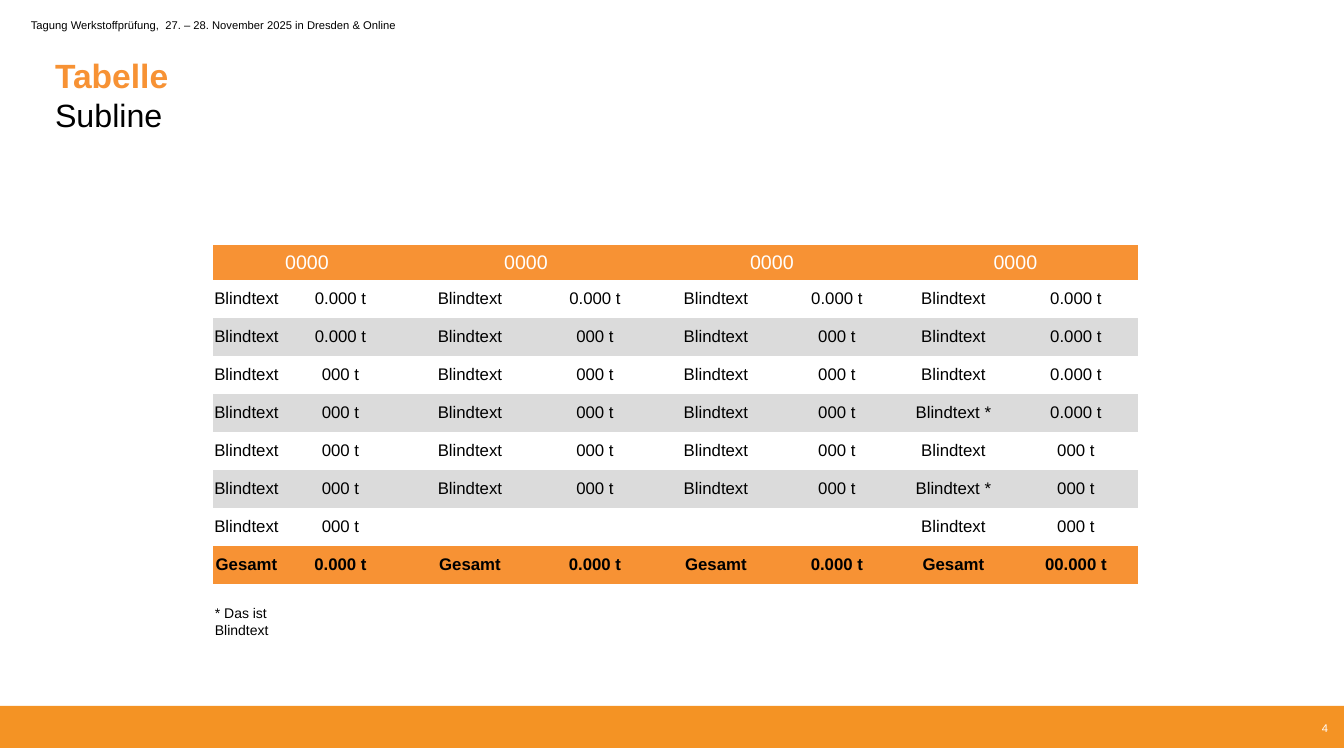
"""Build the table slide with header line, title, totals table and footer bar."""
import copy
from dataclasses import dataclass

import pptx
import pptx.dml.color
import pptx.enum.shapes
import pptx.enum.text
import pptx.oxml.ns
import pptx.util

SLIDE_WIDTH, SLIDE_HEIGHT = 1344, 756
EMU_PER_PX = 12192000 / SLIDE_WIDTH
PLAIN_TABLE_STYLE = "{2D5ABB26-0587-4C30-8999-92F81FD0307C}"
ALIGN = pptx.enum.text.PP_ALIGN
ANCHOR = pptx.enum.text.MSO_ANCHOR


@dataclass(frozen=True)
class Theme:
    """Colours, font and type sizes of the slide."""
    font: str = "Arial"
    accent: str = "F79234"
    bar: str = "F49324"
    band: str = "DBDBDB"
    light: str = "FFFFFF"
    ink: str = "000000"
    headline: int = 24
    subline: int = 23
    column_head: int = 14
    entry: int = 12
    footnote: int = 10
    small: int = 8


THEME = Theme()
COLUMN_WIDTHS = (67, 121, 138, 112, 130, 112, 121, 124)
HEAD_HEIGHT, ROW_HEIGHT = 35, 38
HEADS = ("0000",) * 4
ENTRY, STARRED, EMPTY = "Blindtext", "Blindtext *", ""
LARGE, SMALL = "0.000 t", "000 t"
ROWS = (
    (ENTRY, LARGE) * 4,
    (ENTRY, LARGE) + (ENTRY, SMALL) * 2 + (ENTRY, LARGE),
    (ENTRY, SMALL) * 3 + (ENTRY, LARGE),
    (ENTRY, SMALL) * 3 + (STARRED, LARGE),
    (ENTRY, SMALL) * 4,
    (ENTRY, SMALL) * 3 + (STARRED, SMALL),
    (ENTRY, SMALL) + (EMPTY,) * 4 + (ENTRY, SMALL),
)
TOTALS = ("Gesamt", LARGE) * 3 + ("Gesamt", "00.000 t")


def px(length):
    """Turn pixels into EMU."""
    return pptx.util.Emu(round(length * EMU_PER_PX))


def rgb(value):
    """Turn a hex string into a colour."""
    return pptx.dml.color.RGBColor.from_string(value)


def write(paragraph, text, size=THEME.entry, color=THEME.ink, bold=False, align=ALIGN.LEFT):
    """Add a formatted run to a paragraph and return it."""
    paragraph.alignment = align
    run = paragraph.add_run()
    run.text = text
    run.font.name = THEME.font
    run.font.size = pptx.util.Pt(size)
    run.font.bold = bold
    run.font.color.rgb = rgb(color)
    return run


def add_label(slide, box, text, anchor=ANCHOR.MIDDLE, wrap=True, **style):
    """Place a single-line text box."""
    frame = slide.shapes.add_textbox(*map(px, box)).text_frame
    frame.word_wrap = wrap
    frame.vertical_anchor = anchor
    write(frame.paragraphs[0], text, **style)


def fill_title(slide, box):
    """Place the title placeholder with headline and subline."""
    title = slide.shapes.title
    title.left, title.top, title.width, title.height = map(px, box)
    frame = title.text_frame
    frame.auto_size = pptx.enum.text.MSO_AUTO_SIZE.NONE
    frame.vertical_anchor = ANCHOR.TOP
    frame.margin_left = px(10)
    frame.margin_top = px(9)
    paragraph = frame.paragraphs[0]
    headline = write(paragraph, "Tabelle ", size=THEME.headline, color=THEME.accent, bold=True)
    paragraph.add_line_break()
    line_break = paragraph._p.find(pptx.oxml.ns.qn("a:br"))
    line_break.append(copy.deepcopy(headline._r.rPr))
    write(paragraph, "Subline", size=THEME.subline)


def fill_cell(cell, text, background, **style):
    """Colour a table cell and write its centred text."""
    cell.fill.solid()
    cell.fill.fore_color.rgb = rgb(background)
    cell.margin_left = cell.margin_right = cell.margin_top = cell.margin_bottom = 0
    cell.vertical_anchor = ANCHOR.MIDDLE
    if text:
        write(cell.text_frame.paragraphs[0], text, align=ALIGN.CENTER, **style)


def add_totals_table(slide, left, top):
    """Build the table with merged heads, banded rows and a totals row."""
    body = ROWS + (TOTALS,)
    height = HEAD_HEIGHT + ROW_HEIGHT * len(body)
    box = map(px, (left, top, sum(COLUMN_WIDTHS), height))
    table = slide.shapes.add_table(len(body) + 1, len(COLUMN_WIDTHS), *box).table
    table.first_row = table.horz_banding = False
    table._tbl.tblPr.find(pptx.oxml.ns.qn("a:tableStyleId")).text = PLAIN_TABLE_STYLE
    for column, width in zip(table.columns, COLUMN_WIDTHS):
        column.width = px(width)
    for index, row in enumerate(table.rows):
        row.height = px(ROW_HEIGHT if index else HEAD_HEIGHT)
    for index, head in enumerate(HEADS):
        cell = table.cell(0, 2 * index)
        cell.merge(table.cell(0, 2 * index + 1))
        fill_cell(cell, head, THEME.accent, size=THEME.column_head, color=THEME.light)
    for row_index, entries in enumerate(body, start=1):
        is_total = entries is TOTALS
        stripe = THEME.light if row_index % 2 else THEME.band
        background = THEME.accent if is_total else stripe
        for column_index, entry in enumerate(entries):
            fill_cell(table.cell(row_index, column_index), entry, background, bold=is_total)


def add_footer(slide, left, top, width, height):
    """Draw the footer bar with the page number at its right."""
    bar = slide.shapes.add_shape(
        pptx.enum.shapes.MSO_SHAPE.RECTANGLE, *map(px, (left, top, width, height)))
    bar.shadow.inherit = False
    bar.fill.solid()
    bar.fill.fore_color.rgb = rgb(THEME.bar)
    bar.line.fill.background()
    add_label(slide, (left + width - 97, top + 10, 91, 24), "4",
              size=THEME.small, color=THEME.light, align=ALIGN.RIGHT)


def build_table_slide(deck):
    """Compose the whole slide."""
    slide = deck.slides.add_slide(deck.slide_layouts[5])
    add_footer(slide, 0, 706, SLIDE_WIDTH, 42)
    add_label(slide, (21, 13, 1050, 24),
              "Tagung Werkstoffprüfung,  27. – 28. November 2025 in Dresden & Online",
              size=THEME.small)
    fill_title(slide, (45, 46, 1299, 101))
    add_totals_table(slide, 213, 245)
    add_label(slide, (205, 600, 129, 27), "* Das ist Blindtext",
              anchor=ANCHOR.TOP, wrap=False, size=THEME.footnote)


def main():
    """Create and save the deck."""
    deck = pptx.Presentation()
    deck.slide_width, deck.slide_height = px(SLIDE_WIDTH), px(SLIDE_HEIGHT)
    build_table_slide(deck)
    deck.save("out.pptx")


if __name__ == "__main__":
    main()
